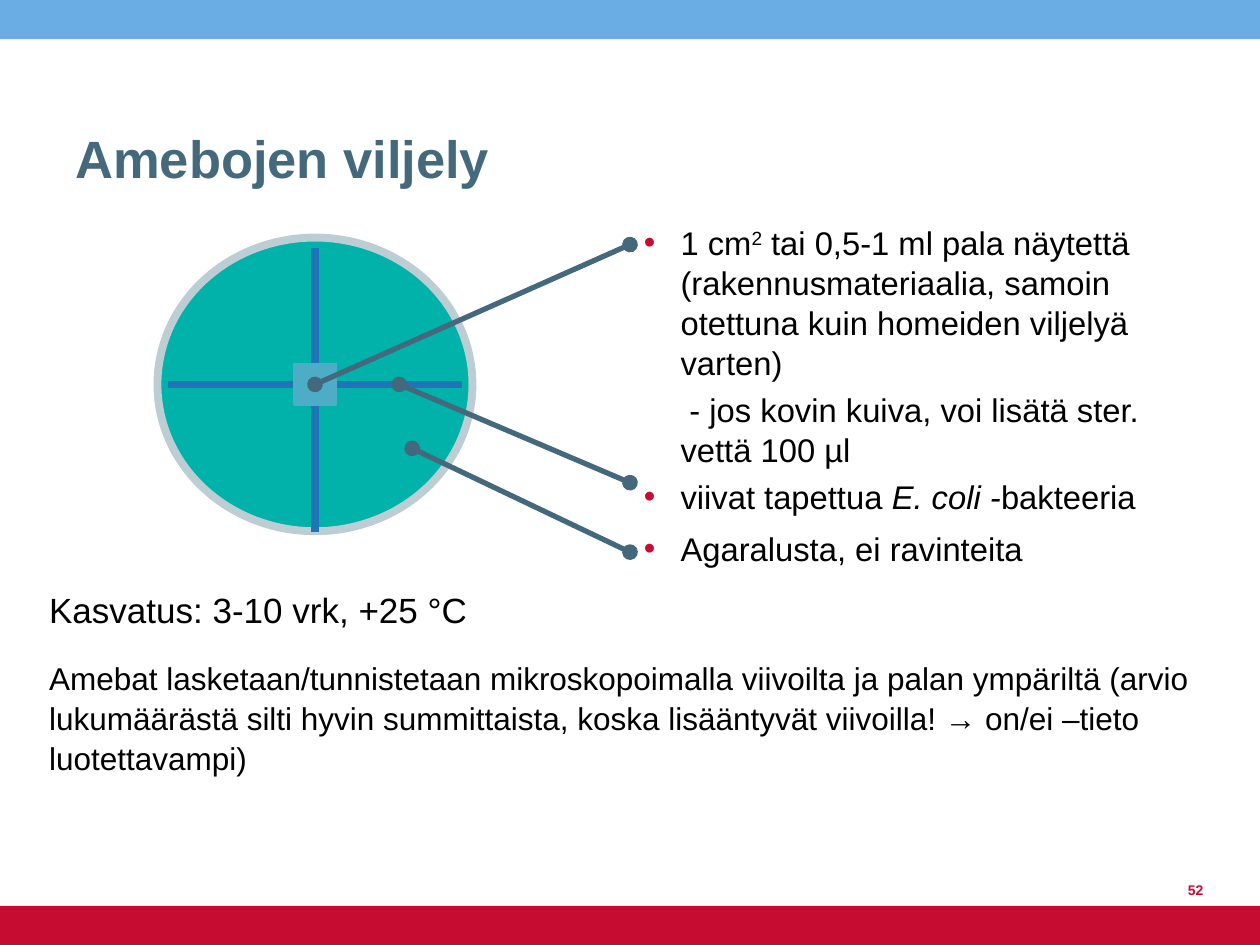
import pptx
import pptx.dml.color
import pptx.enum.shapes
import pptx.enum.text
import pptx.oxml.ns
import pptx.util
from lxml import etree

Cm, Pt = pptx.util.Cm, pptx.util.Pt
ALIGN, ANCHOR = pptx.enum.text.PP_ALIGN, pptx.enum.text.MSO_ANCHOR
SHAPE = pptx.enum.shapes.MSO_SHAPE
qn = pptx.oxml.ns.qn

COLORS = {
    "top_band": "6AADE4", "red": "C60C30", "slate": "44697D", "text": "000000",
    "agar": "00B2A9", "rim": "BCCDD4", "streak": "2174B8", "sample": "4DADC6",
}
WIDTH, HEIGHT, BAND = 25.4, 19.05, 0.79

TITLE = ["Amebojen viljely"]
# A paragraph is a string, or a dict whose runs are (text, style) pairs
NOTES = [
    {"runs": [("1 cm", ""), ("2", "super"),
              (" tai 0,5-1 ml pala näytettä (rakennusmateriaalia, samoin "
               "otettuna kuin homeiden viljelyä varten)", "")],
     "bullet": True},
    {"runs": [("- jos kovin kuiva, voi lisätä ster. vettä 100 µl", "")],
     "indent": 0.18, "before": 3.7},
    {"runs": [("viivat tapettua", ""), (" E. coli -", "italic"), ("bakteeria", "")],
     "bullet": True, "before": 3.7},
    {"runs": [("Agaralusta, ei ravinteita", "")], "bullet": True, "before": 6.7},
]
GROWTH = [
    {"runs": [("Kasvatus: 3-10 vrk, +25 °C", "")], "size": 20},
    {"runs": [("Amebat lasketaan/tunnistetaan mikroskopoimalla viivoilta ja palan "
               "ympäriltä (arvio lukumäärästä silti hyvin summittaista, koska "
               "lisääntyvät viivoilla! → on/ei –tieto luotettavampi)", "")],
     "before": 15, "spacing": 23},
]
PAGE_NUMBER = ["52"]

CENTER_X, CENTER_Y = 6.35, 7.75
DISH_W, DISH_H, SAMPLE_SIDE = 6.35, 5.92, 0.84
NOTES_X, NOTES_INDENT = 12.7, 0.74
STREAKS = [
    (CENTER_X, 5.0, CENTER_X, 10.72),
    (3.38, CENTER_Y, 9.32, CENTER_Y),
]
POINTERS = [
    (CENTER_X, CENTER_Y, NOTES_X, 4.93),
    (8.05, CENTER_Y, NOTES_X, 9.73),
    (8.31, 9.04, NOTES_X, 11.13),
]


def rgb(name):
    return pptx.dml.color.RGBColor.from_string(COLORS[name])


def add_text(slide, paragraphs, left, top, width, height, *, size, color="text",
             bold=False, align=ALIGN.LEFT, anchor=ANCHOR.TOP, spacing=None, margin=0):
    frame = slide.shapes.add_textbox(Cm(left), Cm(top), Cm(width), Cm(height)).text_frame
    frame.word_wrap = True
    frame.vertical_anchor = anchor
    for index, content in enumerate(paragraphs):
        if isinstance(content, str):
            content = {"runs": [(content, "")]}
        paragraph = frame.paragraphs[0] if index == 0 else frame.add_paragraph()
        paragraph.alignment = align
        line_height = content.get("spacing", spacing)
        if line_height:
            paragraph.line_spacing = Pt(line_height)
        if "before" in content:
            paragraph.space_before = Pt(content["before"])
        bullet = content.get("bullet", False)
        if margin:
            properties = paragraph._p.get_or_add_pPr()
            properties.set("marL", str(Cm(margin)))
            properties.set("indent", str(Cm(-margin if bullet else content.get("indent", 0))))
            if bullet:
                bullet_color = etree.SubElement(properties, qn("a:buClr"))
                etree.SubElement(bullet_color, qn("a:srgbClr"), val=COLORS["red"])
                etree.SubElement(properties, qn("a:buFont"), typeface="Arial")
                etree.SubElement(properties, qn("a:buChar"), char="•")
        for words, style in content["runs"]:
            run = paragraph.add_run()
            run.text = words
            run.font.name = "Arial"
            run.font.size = Pt(content.get("size", size))
            run.font.bold = bold
            run.font.italic = style == "italic"
            run.font.color.rgb = rgb(color)
            if style == "super":
                run._r.get_or_add_rPr().set("baseline", "30000")


def add_figure(slide, kind, left, top, width, height, fill, line=None, weight=1):
    figure = slide.shapes.add_shape(kind, Cm(left), Cm(top), Cm(width), Cm(height))
    figure.shadow.inherit = False
    figure.fill.solid()
    figure.fill.fore_color.rgb = rgb(fill)
    if line:
        figure.line.color.rgb = rgb(line)
        figure.line.width = Pt(weight)
    else:
        figure.line.fill.background()


def add_centered(slide, kind, width, height, **look):
    add_figure(slide, kind, CENTER_X - width / 2, CENTER_Y - height / 2, width, height, **look)


def add_line(slide, ends, color, weight, oval_ends=False):
    line = slide.shapes.add_connector(
        pptx.enum.shapes.MSO_CONNECTOR.STRAIGHT, *(Cm(value) for value in ends))
    line.line.color.rgb = rgb(color)
    line.line.width = Pt(weight)
    if oval_ends:
        for end in ("a:headEnd", "a:tailEnd"):
            etree.SubElement(line.line._get_or_add_ln(), qn(end), type="oval")
    etree.SubElement(line._element.spPr, qn("a:effectLst"))


def main():
    presentation = pptx.Presentation()
    presentation.slide_width, presentation.slide_height = Cm(WIDTH), Cm(HEIGHT)
    slide = presentation.slides.add_slide(presentation.slide_layouts[6])

    for top, color in ((0, "top_band"), (HEIGHT - BAND, "red")):
        add_figure(slide, SHAPE.RECTANGLE, 0, top, WIDTH, BAND, color)
    add_text(slide, TITLE, 1.27, 1.73, 22.86, 2.21, size=30, color="slate",
             bold=True, anchor=ANCHOR.BOTTOM)
    add_text(slide, NOTES, 12.73, 4.34, 11.91, 7.39, size=18.7, spacing=23,
             margin=NOTES_INDENT)

    add_centered(slide, SHAPE.OVAL, DISH_W, DISH_H, fill="agar", line="rim", weight=4.5)
    for streak in STREAKS:
        add_line(slide, streak, "streak", 4.5)
    add_centered(slide, SHAPE.RECTANGLE, SAMPLE_SIDE, SAMPLE_SIDE, fill="sample", line="sample")
    add_text(slide, GROWTH, 0.74, 11.73, 23.93, 3.81, size=18)
    for pointer in POINTERS:
        add_line(slide, pointer, "slate", 3, oval_ends=True)

    add_text(slide, PAGE_NUMBER, 23.11, 17.22, 1.4, 1.02, size=8, color="red",
             bold=True, align=ALIGN.RIGHT, anchor=ANCHOR.BOTTOM)
    presentation.save("out.pptx")


if __name__ == "__main__":
    main()
